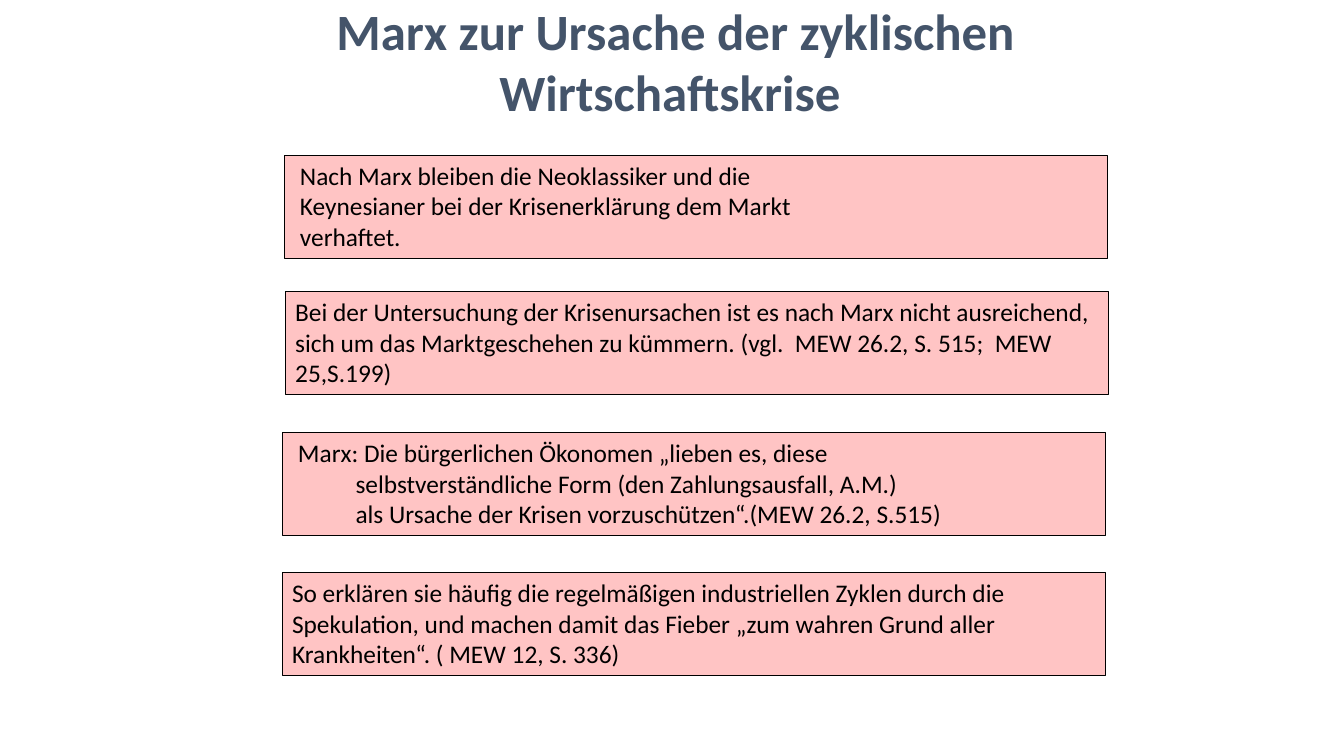
from lxml import etree
from pptx import Presentation
from pptx.dml.color import RGBColor
from pptx.enum import shapes, text
from pptx.oxml.ns import qn
from pptx.util import Cm, Pt

SLATE = RGBColor(0x44, 0x54, 0x6A)
RED = RGBColor(0xFF, 0x00, 0x00)
BLACK = RGBColor(0x00, 0x00, 0x00)

deck = Presentation()
deck.slide_width = Cm(33.87)
deck.slide_height = Cm(19.05)
slide = deck.slides.add_slide(deck.slide_layouts[5])

title = slide.shapes.title
title.left, title.top = Cm(4.6), Cm(-0.15)
title.width, title.height = Cm(24.87), Cm(3.35)
title.text = "Marx zur Ursache der zyklischen Wirtschaftskrise "
title.text_frame.auto_size = text.MSO_AUTO_SIZE.NONE
head = title.text_frame.paragraphs[0]
head.alignment = text.PP_ALIGN.CENTER
head.font.name = "Calibri"
head.font.size = Pt(36.3)
head.font.bold = True
head.font.color.rgb = SLATE

# left, top, left inset, hanging indent, wording (\v breaks a line)
boxes = [
    (7.16, 3.91, 0.4, 0,
     "Nach Marx bleiben die Neoklassiker und die\v"
     "Keynesianer bei der Krisenerklärung dem Markt\n"
     "verhaftet."),
    (7.19, 7.35, 0.25, 0,
     "Bei der Untersuchung der Krisenursachen ist es nach Marx nicht "
     "ausreichend, sich um das Marktgeschehen zu kümmern. "
     "(vgl.  MEW 26.2, S. 515;  MEW 25,S.199)"),
    (7.11, 10.9, 0.4, 1.45,
     "Marx: Die bürgerlichen Ökonomen „lieben es, diese\v"
     "selbstverständliche Form (den Zahlungsausfall, A.M.)\v"
     "als Ursache der Krisen vorzuschützen“.(MEW 26.2, S.515)"),
    (7.11, 14.43, 0.25, 0,
     "So erklären sie häufig die regelmäßigen industriellen Zyklen durch "
     "die Spekulation, und machen damit das Fieber „zum wahren Grund "
     "aller Krankheiten“. ( MEW 12, S. 336)"),
]

for left, top, inset, hang, words in boxes:
    box = slide.shapes.add_shape(
        shapes.MSO_SHAPE.RECTANGLE, Cm(left), Cm(top), Cm(20.75), Cm(2.6))
    box.shadow.inherit = False
    box.fill.solid()
    box.fill.fore_color.rgb = RED
    tint = box.fill._xPr.find(".//" + qn("a:srgbClr"))
    etree.SubElement(tint, qn("a:alpha"), val="23000")
    box.line.color.rgb = BLACK
    box.line.width = Pt(0.75)

    frame = box.text_frame
    frame.word_wrap = True
    frame.vertical_anchor = text.MSO_ANCHOR.TOP
    frame.margin_left = Cm(inset)
    frame.text = words
    for para in frame.paragraphs:
        para.alignment = text.PP_ALIGN.LEFT
        para.font.name = "Calibri"
        para.font.size = Pt(18.1)
        para.font.color.rgb = BLACK
        if hang:
            props = para._p.get_or_add_pPr()
            props.set("marL", str(Cm(hang)))
            props.set("indent", str(-Cm(hang)))

deck.save("out.pptx")
